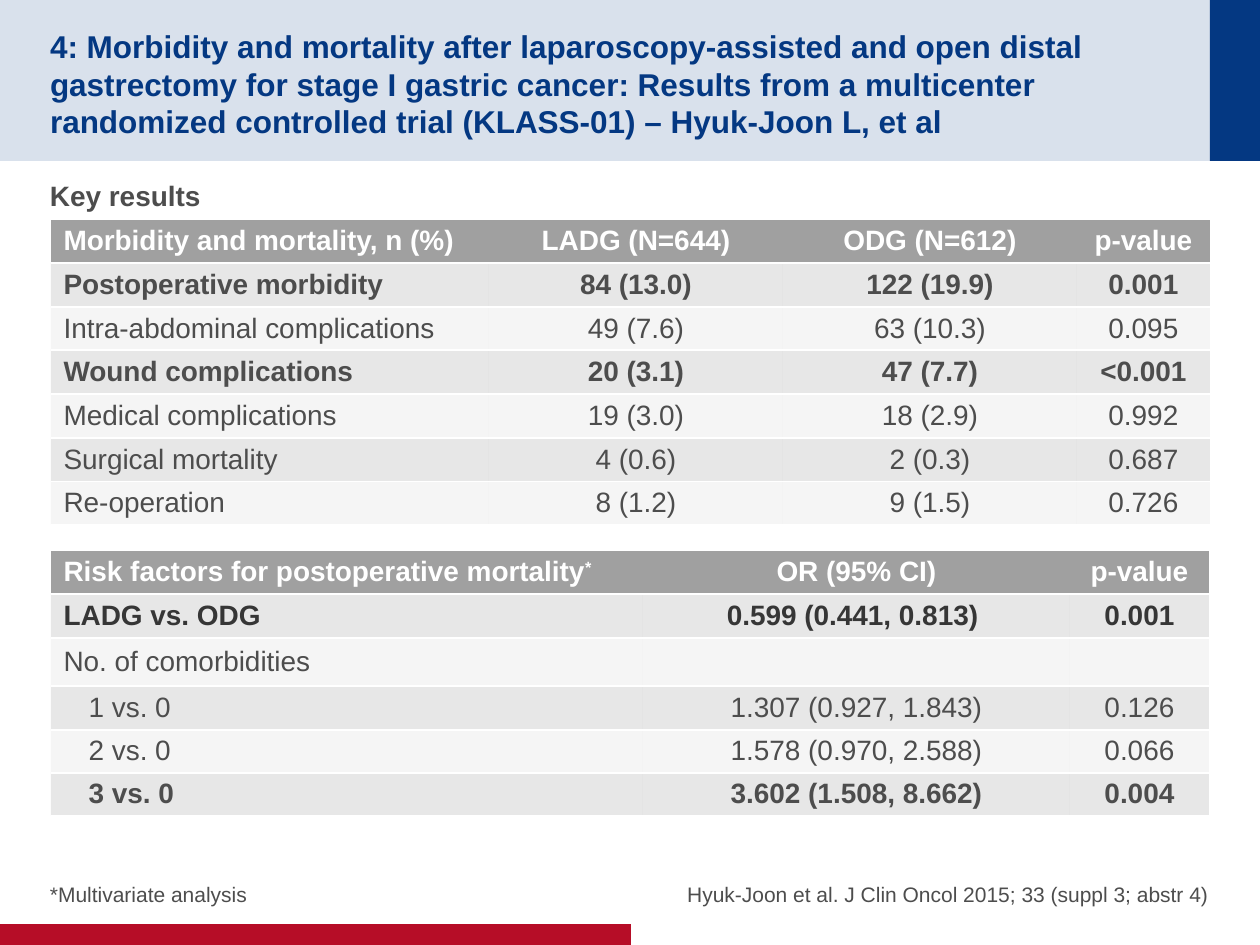
from dataclasses import dataclass

from lxml import etree
from pptx import Presentation
from pptx import util as u
from pptx.dml.color import RGBColor
from pptx.enum import shapes, text
from pptx.oxml import ns

EMU_PER_PX = 914400 / 126
LEFT, CENTER, RIGHT = text.PP_ALIGN.LEFT, text.PP_ALIGN.CENTER, text.PP_ALIGN.RIGHT
TOP, MIDDLE, BOTTOM = text.MSO_ANCHOR.TOP, text.MSO_ANCHOR.MIDDLE, text.MSO_ANCHOR.BOTTOM


@dataclass(frozen=True)
class Theme:
    font: str = "Arial"
    navy: str = "043882"
    red: str = "B60D27"
    grey: str = "A0A0A0"
    ink: str = "4D4D4D"
    dark: str = "363636"
    white: str = "FFFFFF"
    title_size: int = 18
    body_size: int = 16
    note_size: int = 12


@dataclass(frozen=True)
class Box:
    left: int
    top: int
    width: int
    height: int

    def emu(self) -> tuple:
        return tuple(px(v) for v in (self.left, self.top, self.width, self.height))


@dataclass(frozen=True)
class Band:
    box: Box
    color: str
    opacity: int = 100


@dataclass(frozen=True)
class Note:
    box: Box
    words: str
    size: int
    bold: bool = False
    align: int = LEFT
    anchor: int = BOTTOM
    inset: int = 0


@dataclass(frozen=True)
class Row:
    cells: tuple
    height: int = 44
    bold: bool = False
    color: str = Theme.ink
    indent: int = 0
    superscript: str = ""


@dataclass(frozen=True)
class ResultTable:
    left: int
    top: int
    columns: tuple
    rows: tuple


THEME = Theme()


def px(value: int) -> int:
    return u.Emu(round(value * EMU_PER_PX))


def paint(fill, color: str, opacity: int = 100) -> None:
    fill.solid()
    fill.fore_color.rgb = RGBColor.from_string(color)
    if opacity < 100:
        tint = fill._xPr.find(".//" + ns.qn("a:srgbClr"))
        etree.SubElement(tint, ns.qn("a:alpha")).set("val", str(opacity * 1000))


def add_run(paragraph, words: str, size: int, color: str, bold: bool = False):
    run = paragraph.add_run()
    run.text = words
    run.font.name, run.font.size, run.font.bold = THEME.font, u.Pt(size), bold
    run.font.color.rgb = RGBColor.from_string(color)
    return run


def set_frame(frame, anchor: int, top: int = 0, bottom: int = 0) -> None:
    frame.word_wrap, frame.auto_size = True, text.MSO_AUTO_SIZE.NONE
    frame.vertical_anchor = anchor
    frame.margin_left = frame.margin_right = 0
    frame.margin_top, frame.margin_bottom = px(top), px(bottom)


def draw_band(slide, band: Band) -> None:
    bar = slide.shapes.add_shape(shapes.MSO_SHAPE.RECTANGLE, *band.box.emu())
    bar.shadow.inherit = False
    bar.line.fill.background()
    paint(bar.fill, band.color, band.opacity)


def draw_title(slide, box: Box, words: str) -> None:
    title = slide.shapes.title
    title.left, title.top, title.width, title.height = box.emu()
    set_frame(title.text_frame, MIDDLE, top=6)
    paragraph = title.text_frame.paragraphs[0]
    paragraph.alignment = LEFT
    add_run(paragraph, words, THEME.title_size, THEME.navy, True)
    title.element.getparent().append(title.element)  # in front of the bands


def draw_note(slide, note: Note) -> None:
    frame = slide.shapes.add_textbox(*note.box.emu()).text_frame
    set_frame(frame, note.anchor, note.inset, note.inset)
    paragraph = frame.paragraphs[0]
    paragraph.alignment = note.align
    add_run(paragraph, note.words, note.size, THEME.ink, note.bold)


def rule_cell(cell) -> None:
    """White rules above and below, none at the sides; they precede the fill."""
    properties = cell._tc.get_or_add_tcPr()
    for position, side in enumerate(("lnL", "lnR", "lnT", "lnB")):
        line = etree.Element(ns.qn("a:" + side), w=str(u.Pt(1)))
        if side in ("lnT", "lnB"):
            solid = etree.SubElement(line, ns.qn("a:solidFill"))
            etree.SubElement(solid, ns.qn("a:srgbClr"), val=THEME.white)
        else:
            etree.SubElement(line, ns.qn("a:noFill"))
        properties.insert(position, line)


def fill_cell(cell, row: Row, column: int, opacity: int) -> None:
    cell.vertical_anchor = MIDDLE
    cell.margin_top = cell.margin_bottom = px(4)
    paint(cell.fill, THEME.grey, opacity)
    rule_cell(cell)
    paragraph = cell.text_frame.paragraphs[0]
    paragraph.alignment = CENTER if column else LEFT
    if row.cells[column]:
        add_run(paragraph, row.cells[column], THEME.body_size, row.color, row.bold)
    if column == 0 and row.indent:
        paragraph._p.get_or_add_pPr().set("marL", str(px(row.indent)))
    if column == 0 and row.superscript:
        mark = add_run(paragraph, row.superscript, THEME.body_size, row.color, row.bold)
        mark.font._element.set("baseline", "30000")


def draw_table(slide, data: ResultTable) -> None:
    box = Box(data.left, data.top, sum(data.columns), sum(r.height for r in data.rows))
    table = slide.shapes.add_table(len(data.rows), len(data.columns), *box.emu()).table
    for column, width in zip(table.columns, data.columns):
        column.width = px(width)
    for r, row in enumerate(data.rows):
        table.rows[r].height = px(row.height)
        opacity = 100 if r == 0 else 25 if r % 2 else 10
        for c in range(len(data.columns)):
            fill_cell(table.cell(r, c), row, c, opacity)


BANDS = (
    Band(Box(0, 0, 1260, 161), THEME.navy, 15),
    Band(Box(1210, 0, 50, 161), THEME.navy),
    Band(Box(0, 924, 631, 21), THEME.red),
)
TITLE = ("4: Morbidity and mortality after laparoscopy-assisted and open distal gastrectomy "
         "for stage I gastric cancer: Results from a multicenter randomized controlled trial "
         "(KLASS-01) – Hyuk-Joon L, et al")
NOTES = (
    Note(Box(50, 173, 1160, 654), "Key results", THEME.body_size, True, anchor=TOP, inset=6),
    Note(Box(50, 840, 570, 67), "*Multivariate analysis", THEME.note_size),
    Note(Box(640, 840, 569, 67), "Hyuk-Joon et al. J Clin Oncol 2015; 33 (suppl 3; abstr 4)",
         THEME.note_size, align=RIGHT),
)
MORBIDITY = ResultTable(51, 219, (438, 294, 294, 133), (
    Row(("Morbidity and mortality, n (%)", "LADG (N=644)", "ODG (N=612)", "p-value"),
        bold=True, color=THEME.white),
    Row(("Postoperative morbidity", "84 (13.0)", "122 (19.9)", "0.001"), bold=True),
    Row(("Intra-abdominal complications", "49 (7.6)", "63 (10.3)", "0.095"), 43),
    Row(("Wound complications", "20 (3.1)", "47 (7.7)", "<0.001"), bold=True),
    Row(("Medical complications", "19 (3.0)", "18 (2.9)", "0.992")),
    Row(("Surgical mortality", "4 (0.6)", "2 (0.3)", "0.687")),
    Row(("Re-operation", "8 (1.2)", "9 (1.5)", "0.726"), 43),
))
RISK_FACTORS = ResultTable(51, 550, (592, 427, 139), (
    Row(("Risk factors for postoperative mortality", "OR (95% CI)", "p-value"),
        bold=True, color=THEME.white, superscript="*"),
    Row(("LADG vs. ODG", "0.599 (0.441, 0.813) ", "0.001"), bold=True, color=THEME.dark),
    Row(("No. of comorbidities", "", ""), 48),
    Row(("1 vs. 0", "1.307 (0.927, 1.843)", "0.126"), indent=25),
    Row(("2 vs. 0", "1.578 (0.970, 2.588)", "0.066"), 43, indent=25),
    Row(("3 vs. 0", "3.602 (1.508, 8.662)", "0.004"), 43, bold=True, indent=25),
))


def main() -> None:
    deck = Presentation()
    deck.slide_width, deck.slide_height = px(1260), px(945)
    slide = deck.slides.add_slide(deck.slide_layouts[5])
    # Header and footer bands, then the title over them
    for band in BANDS:
        draw_band(slide, band)
    draw_title(slide, Box(50, 25, 1135, 111), TITLE)
    # Heading and footnotes
    for note in NOTES:
        draw_note(slide, note)
    # Results
    for data in (MORBIDITY, RISK_FACTORS):
        draw_table(slide, data)
    deck.save("out.pptx")


if __name__ == "__main__":
    main()
